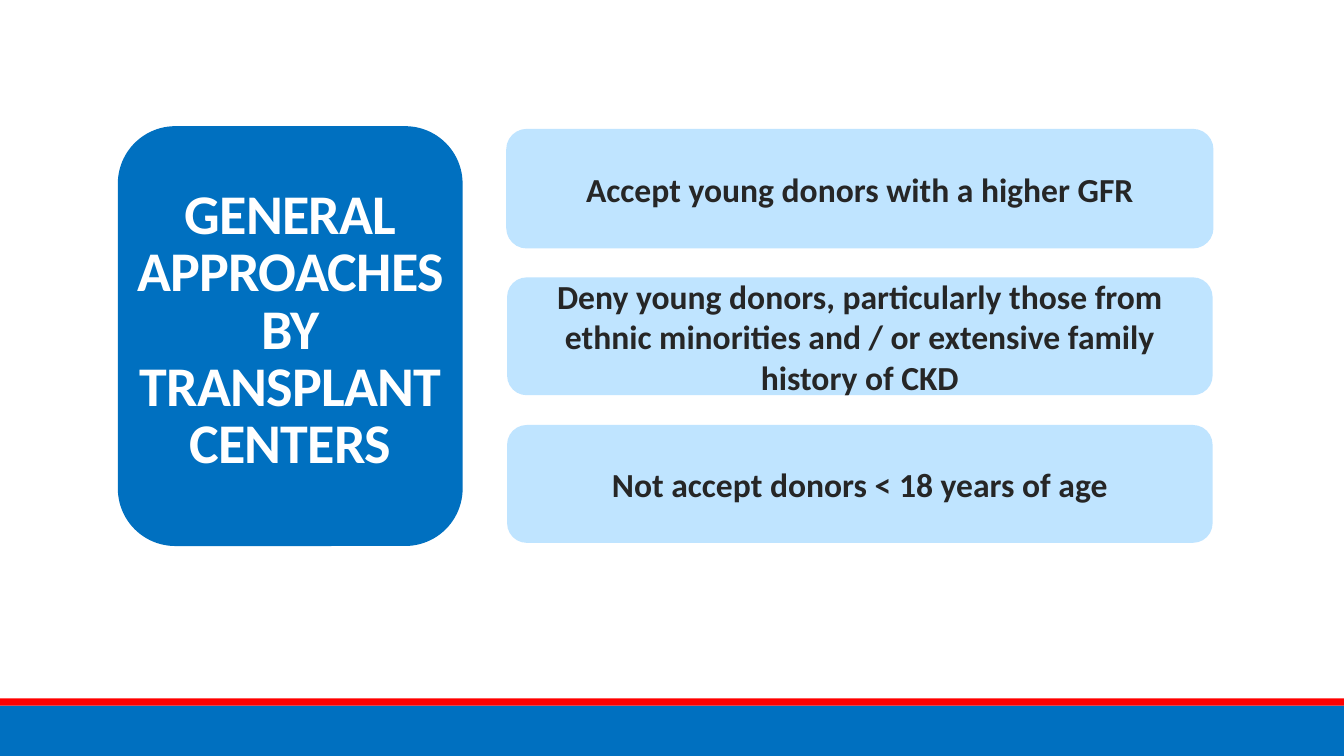
from typing import NamedTuple

from pptx import Presentation
from pptx.dml.color import RGBColor
from pptx.enum import shapes, text
from pptx.util import Cm, Pt

COLORS = {"blue": "0070C0", "red": "FF0000", "pale": "BFE4FF",
          "ink": "262626", "white": "FFFFFF"}
FONT = "Calibri"
WIDTH, HEIGHT = 33.87, 19.05


class Block(NamedTuple):
    """A filled shape; lengths in centimetres."""
    kind: shapes.MSO_SHAPE
    left: float
    top: float
    width: float
    height: float
    color: str


RECT, ROUNDED = shapes.MSO_SHAPE.RECTANGLE, shapes.MSO_SHAPE.ROUNDED_RECTANGLE
FOOTER_BARS = [
    Block(RECT, 0, 17.78, WIDTH, 1.27, "blue"),
    Block(RECT, 0, 17.6, WIDTH, 0.18, "red"),
]
TITLE_PANEL = Block(ROUNDED, 2.97, 3.18, 8.69, 10.58, "blue")
APPROACHES = [
    "Accept young donors with a higher GFR",
    "Deny young donors, particularly those from ethnic minorities "
    "and / or extensive family history of CKD",
    "Not accept donors < 18 years of age",
]
FIRST_TOP, PITCH = 3.27, 3.72


def rgb(name: str) -> RGBColor:
    return RGBColor.from_string(COLORS[name])


def draw_block(page, block: Block):
    shape = page.shapes.add_shape(
        block.kind, Cm(block.left), Cm(block.top), Cm(block.width), Cm(block.height))
    shape.shadow.inherit = False
    shape.fill.solid()
    shape.fill.fore_color.rgb = rgb(block.color)
    shape.line.fill.background()
    return shape


def write(shape, words: str, size: int, color: str, anchor: text.MSO_ANCHOR):
    frame = shape.text_frame
    frame.word_wrap = True
    frame.auto_size = text.MSO_AUTO_SIZE.NONE
    frame.vertical_anchor = anchor
    para = frame.paragraphs[0]
    para.text = words
    para.alignment = text.PP_ALIGN.CENTER
    para.font.name = FONT
    para.font.size = Pt(size)
    para.font.bold = True
    para.font.color.rgb = rgb(color)
    return para


def main() -> None:
    deck = Presentation()
    deck.slide_width, deck.slide_height = Cm(WIDTH), Cm(HEIGHT)
    page = deck.slides.add_slide(deck.slide_layouts[5])

    # Footer bars
    for bar in FOOTER_BARS:
        draw_block(page, bar)

    # Title in front of its panel
    panel = draw_block(page, TITLE_PANEL)
    title = page.shapes.title
    title.left, title.top = panel.left, Cm(4.47)
    title.width, title.height = panel.width, Cm(7.62)
    para = write(title, "GENERAL APPROACHES BY TRANSPLANT CENTERS", 40, "white",
                 text.MSO_ANCHOR.BOTTOM)
    para.line_spacing = 0.85
    para.runs[0].font.size = Pt(40)
    para.runs[0]._r.get_or_add_rPr().set("spc", "-50")
    panel.element.addnext(title.element)

    # Approaches, evenly stacked
    for index, words in enumerate(APPROACHES):
        card = draw_block(page, Block(
            ROUNDED, 12.78, FIRST_TOP + index * PITCH, 17.78, 2.97, "pale"))
        write(card, words, 24, "ink", text.MSO_ANCHOR.MIDDLE)
        if index == 0:
            card.line.color.rgb = rgb("pale")
            card.line.width = Pt(1.25)

    deck.save("out.pptx")


if __name__ == "__main__":
    main()
